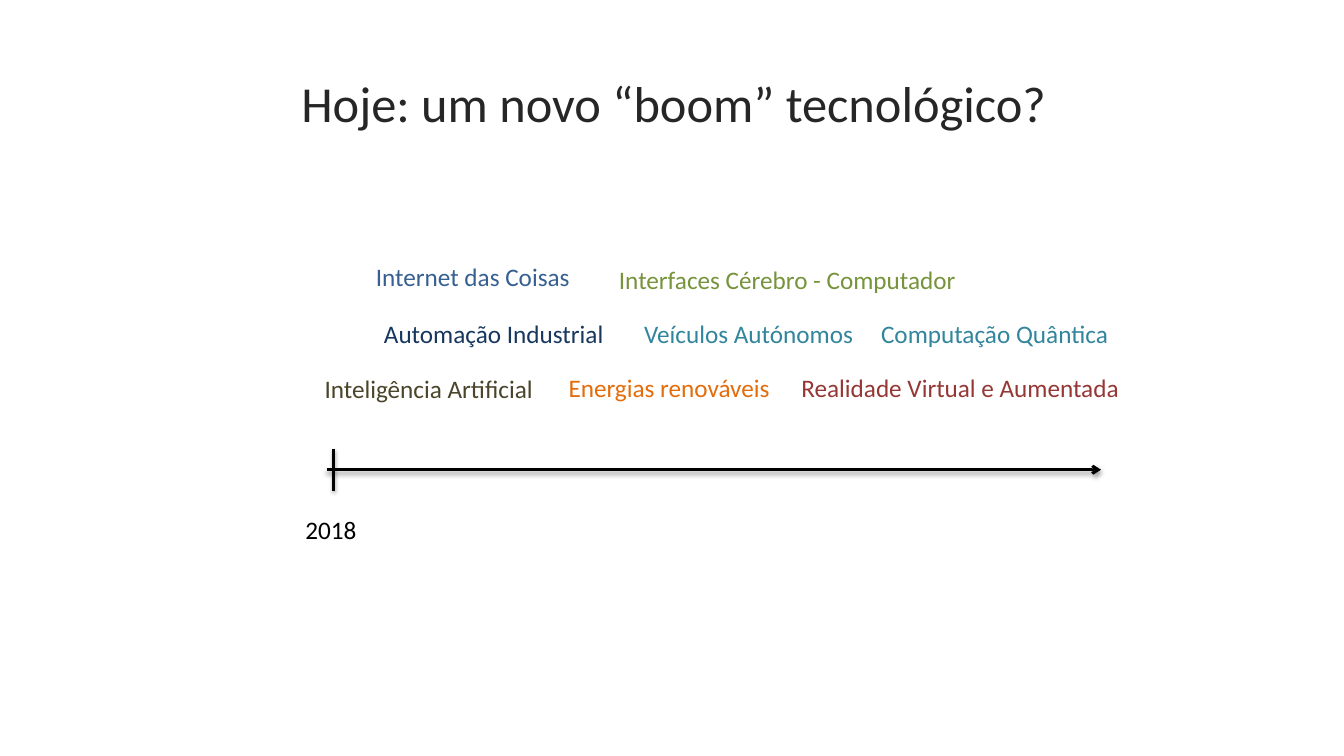
"""Builds a slide with a timeline of today's emerging technologies."""
from lxml import etree
from pptx import Presentation
from pptx.dml.color import RGBColor
from pptx.enum.shapes import MSO_CONNECTOR
from pptx.enum.text import MSO_ANCHOR, MSO_AUTO_SIZE
from pptx.oxml.ns import qn
from pptx.util import Inches, Pt

STRAIGHT = MSO_CONNECTOR.STRAIGHT
TOP, MIDDLE = MSO_ANCHOR.TOP, MSO_ANCHOR.MIDDLE
GROW, FIXED = MSO_AUTO_SIZE.SHAPE_TO_FIT_TEXT, MSO_AUTO_SIZE.NONE

THEME = {
    "font": "Calibri", "title": 36, "body": 18, "line": 2,
    "dark": "262626", "black": "000000", "olive": "4A452A",
    "navy": "17375E", "teal": "31859C", "orange": "E46C0A",
    "blue": "376092", "green": "77933C", "red": "953735",
}

TITLE = "Hoje: um novo “boom” tecnológico?"
YEAR = "2018"
TOPICS = [
    ("Internet das Coisas", 3.63, 2.54, 2.15, "blue"),
    ("Interfaces Cérebro - Computador", 6.04, 2.57, 3.58, "green"),
    ("Automação Industrial", 3.71, 3.11, 2.4, "navy"),
    ("Veículos Autónomos", 6.29, 3.11, 2.3, "teal"),
    ("Computação Quântica", 8.64, 3.11, 2.48, "teal"),
    ("Inteligência Artificial", 3.12, 3.65, 2.29, "olive"),
    ("Energias renováveis", 5.54, 3.64, 2.22, "orange"),
    ("Realidade Virtual e Aumentada", 7.85, 3.64, 3.7, "red"),
]
AXIS = {"left": 3.24, "right": 10.92, "y": 4.66}
TICK = {"x": 3.31, "half": 0.21}
ROW = 0.4


def add_text(slide, text, box, color="black", size="body", wrap=False,
             anchor=TOP, fit=GROW):
    shape = slide.shapes.add_textbox(*map(Inches, box))
    frame = shape.text_frame
    frame.word_wrap = wrap
    frame.auto_size = fit
    frame.vertical_anchor = anchor
    para = frame.paragraphs[0]
    run = para.add_run()
    run.text = text
    run.font.name = THEME["font"]
    run.font.size = Pt(THEME[size])
    run.font.color.rgb = RGBColor.from_string(THEME[color])


def add_line(slide, start, end, arrow=False):
    line = slide.shapes.add_connector(STRAIGHT, *map(Inches, start + end))
    line.line.color.rgb = RGBColor.from_string(THEME["black"])
    line.line.width = Pt(THEME["line"])
    props = line._element.spPr
    if arrow:
        etree.SubElement(props.find(qn("a:ln")), qn("a:tailEnd"), type="arrow")
    effects = etree.SubElement(props, qn("a:effectLst"))
    shadow = etree.SubElement(
        effects, qn("a:outerShdw"), blurRad=str(Pt(3.1)), dist=str(Pt(1.6)),
        dir="5400000", rotWithShape="0")
    color = etree.SubElement(shadow, qn("a:srgbClr"), val=THEME["black"])
    etree.SubElement(color, qn("a:alpha"), val="38000")


def main():
    deck = Presentation()
    deck.slide_width, deck.slide_height = Inches(13.33), Inches(7.5)
    slide = deck.slides.add_slide(deck.slide_layouts[6])

    add_text(slide, TITLE, (2.89, 0.49, 8.43, 1.06), color="dark",
             size="title", wrap=True, anchor=MIDDLE, fit=FIXED)
    y, x, half = AXIS["y"], TICK["x"], TICK["half"]
    add_line(slide, (AXIS["left"], y), (AXIS["right"], y), arrow=True)
    add_line(slide, (x, y - half), (x, y + half))
    add_text(slide, YEAR, (2.93, 5.05, 0.71, ROW))
    for text, left, top, width, color in TOPICS:
        add_text(slide, text, (left, top, width, ROW), color=color)

    deck.save("out.pptx")


if __name__ == "__main__":
    main()
